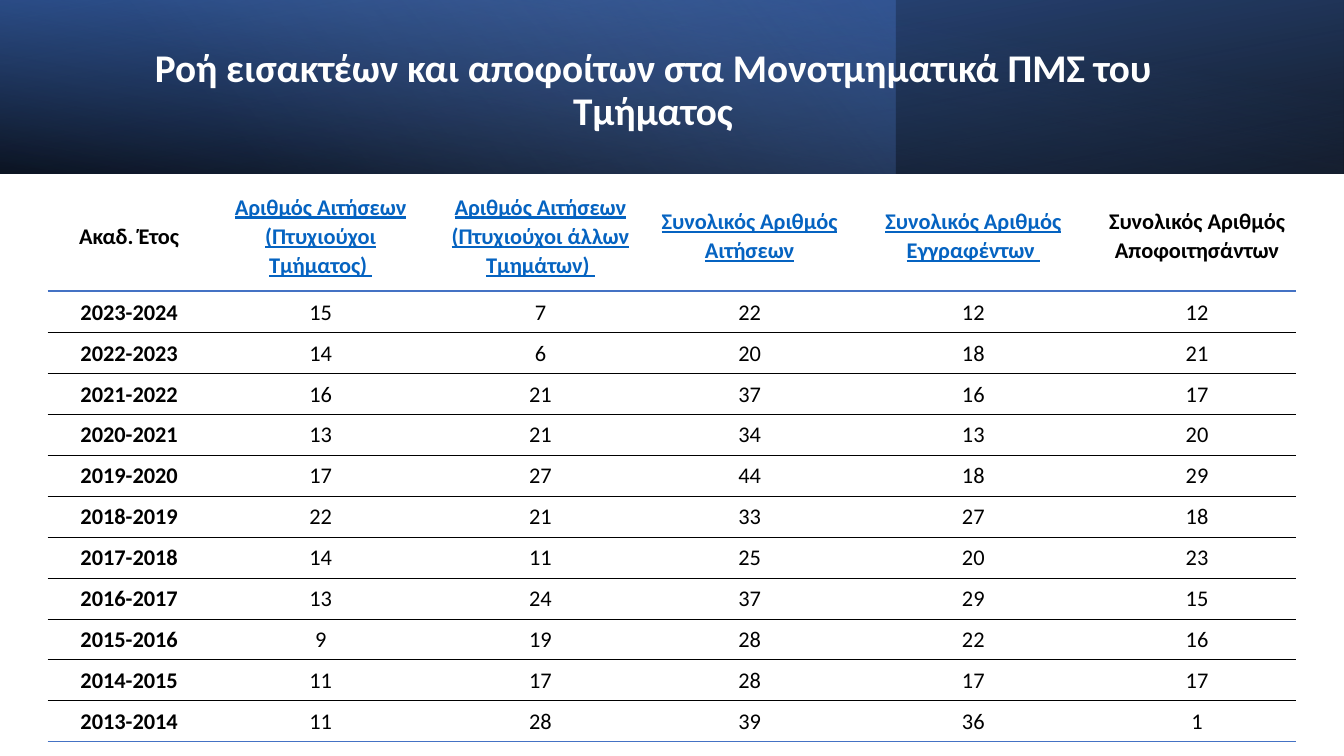
from lxml.etree import SubElement
from pptx import Presentation
from pptx.dml.color import RGBColor
from pptx.enum.shapes import MSO_SHAPE
from pptx.enum.text import MSO_ANCHOR, PP_ALIGN
from pptx.oxml.ns import qn
from pptx.util import Pt


def color(value):
    return RGBColor.from_string(value)


def add_border(cell, side, value, width):
    line = SubElement(cell._tc.get_or_add_tcPr(), qn(side), w=str(Pt(width)))
    fill = SubElement(line, qn("a:solidFill"))
    SubElement(fill, qn("a:srgbClr"), val=value)


deck = Presentation()
deck.slide_width, deck.slide_height = Pt(960), Pt(540)
page = deck.slides.add_slide(deck.slide_layouts[5])

# Header band: width, rotation, flip, angle (clockwise), stops (position, colour, opacity)
bands = [
    (960, 180, True, 100, [(0, "000000", 96), (1, "2F5597", 100)]),
    (640, 0, False, 140, [(0, "4472C4", 41), (0.74, "8FAADC", 0)]),
    (960, 0, True, 260, [(0, "000000", 63), (0.78, "4472C4", 15)]),
]
for width, rotation, flipped, angle, stops in bands:
    band = page.shapes.add_shape(MSO_SHAPE.RECTANGLE, 0, 0, Pt(width), Pt(124))
    band.shadow.inherit = False
    band.line.fill.background()
    band.rotation = rotation
    if flipped:
        band._element.spPr.find(qn("a:xfrm")).set("flipH", "1")
    band.fill.gradient()
    band.fill.gradient_angle = 360 - angle
    for stop, (position, value, opacity) in zip(band.fill.gradient_stops, stops):
        stop.position = position
        stop.color.rgb = color(value)
    tints = band._element.spPr.iter(qn("a:srgbClr"))
    for tint, (position, value, opacity) in zip(tints, stops):
        SubElement(tint, qn("a:alpha"), val=str(opacity * 1000))

# Title, brought in front of the band
title = page.shapes.title
page.shapes._spTree.append(title._element)
title.left, title.top, title.width, title.height = Pt(55.4), Pt(19.4), Pt(822), Pt(91.4)
title.text_frame.text = "Ροή εισακτέων και αποφοίτων στα Μονοτμηματικά ΠΜΣ του Τμήματος"
title.text_frame.word_wrap = True
title.text_frame.vertical_anchor = MSO_ANCHOR.MIDDLE
para = title.text_frame.paragraphs[0]
para.alignment = PP_ALIGN.CENTER
para.line_spacing = 0.9
font = para.runs[0].font
font.name, font.size, font.bold = "Calibri", Pt(28), True
font.color.rgb = color("FFFFFF")

# Table contents
headings = [
    "Ακαδ. Έτος",
    "Αριθμός Αιτήσεων (Πτυχιούχοι Τμήματος) ",
    "Αριθμός Αιτήσεων (Πτυχιούχοι άλλων Τμημάτων) ",
    "Συνολικός Αριθμός Αιτήσεων",
    "Συνολικός Αριθμός Εγγραφέντων ",
    "Συνολικός Αριθμός Αποφοιτησάντων",
]
counts = [
    (15, 7, 22, 12, 12),
    (14, 6, 20, 18, 21),
    (16, 21, 37, 16, 17),
    (13, 21, 34, 13, 20),
    (17, 27, 44, 18, 29),
    (22, 21, 33, 27, 18),
    (14, 11, 25, 20, 23),
    (13, 24, 37, 29, 15),
    (9, 19, 28, 22, 16),
    (11, 17, 28, 17, 17),
    (11, 28, 39, 36, 1),
]
rows = [headings]
for index, values in enumerate(counts):
    year = 2023 - index
    rows.append([f"{year}-{year + 1}", *values])

# Table frame, with the plain "no style, no grid" look
column_widths = [116.6, 157, 157, 141.8, 177.8, 141.8]
row_heights = [79] + [29.27] * len(counts)
frame = page.shapes.add_table(len(rows), len(headings), Pt(34), Pt(128.9),
                              Pt(sum(column_widths)), Pt(sum(row_heights)))
table = frame.table
table.first_row = table.horz_banding = False
style = table._tbl.tblPr.find(qn("a:tableStyleId"))
style.text = "{2D5ABB26-0587-4C30-8999-92F81FD0307C}"
for column, width in zip(table.columns, column_widths):
    column.width = Pt(width)
for row, height in zip(table.rows, row_heights):
    row.height = Pt(height)

# Rules below each row: blue under the headings and at the foot, thin black between
rules = [("4472C4", 1.5)] + [("000000", 0.25)] * (len(counts) - 1) + [("4472C4", 1)]

for row_index, row in enumerate(rows):
    for column_index, value in enumerate(row):
        cell = table.cell(row_index, column_index)
        cell.margin_top = cell.margin_bottom = 0
        cell.margin_left = cell.margin_right = Pt(7.2)
        cell.vertical_anchor = MSO_ANCHOR.MIDDLE
        cell.text_frame.text = str(value)
        para = cell.text_frame.paragraphs[0]
        para.alignment = PP_ALIGN.CENTER
        para.line_spacing = 1.07
        para.space_after = Pt(8)
        linked = row_index == 0 and 1 <= column_index <= 4
        font = para.runs[0].font
        font.name, font.size = "Calibri", Pt(16)
        font.bold = row_index == 0 or column_index == 0
        font.underline = linked
        font.color.rgb = color("0563C1" if linked else "000000")
        if row_index > 0:
            add_border(cell, "a:lnT", *rules[row_index - 1])
        add_border(cell, "a:lnB", *rules[row_index])
        cell.fill.background()

deck.save("out.pptx")
